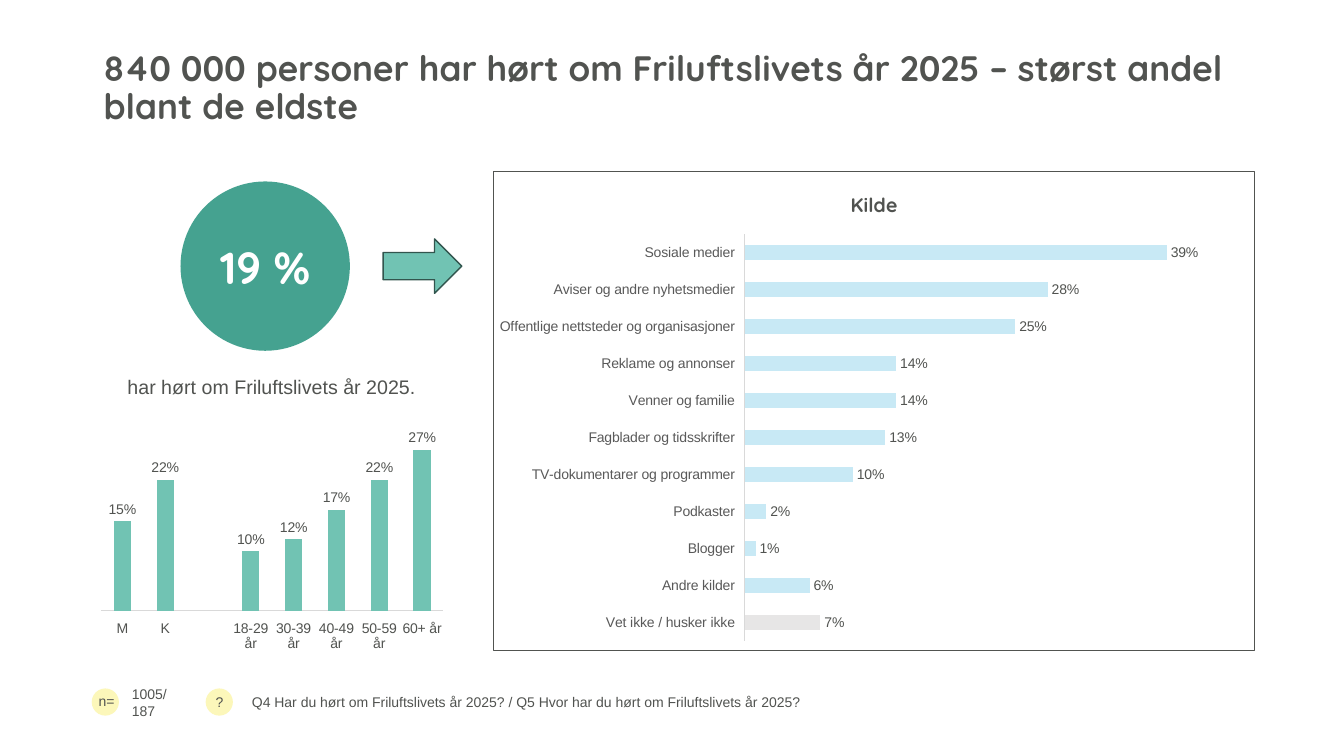
from lxml.etree import fromstring
from pptx import Presentation
from pptx.chart.data import CategoryChartData
from pptx.dml.color import RGBColor
from pptx.enum.chart import XL_CHART_TYPE, XL_LABEL_POSITION, XL_TICK_LABEL_POSITION, XL_TICK_MARK
from pptx.enum.shapes import MSO_SHAPE
from pptx.enum.text import MSO_ANCHOR, PP_ALIGN
from pptx.oxml.ns import nsdecls, qn
from pptx.util import Inches, Pt

DARK = "515350"
TEAL = "71C3B3"
YELLOW = "FCF7BA"
SOURCES = {
    "Sosiale medier": 0.39,
    "Aviser og andre nyhetsmedier": 0.28,
    "Offentlige nettsteder og organisasjoner": 0.25,
    "Reklame og annonser": 0.14,
    "Venner og familie": 0.14,
    "Fagblader og tidsskrifter": 0.13,
    "TV-dokumentarer og programmer": 0.10,
    "Podkaster": 0.02,
    "Blogger": 0.01,
    "Andre kilder": 0.06,
    "Vet ikke / husker ikke": 0.07,
}
GROUPS = {
    "M": 0.15,
    "K": 0.22,
    "": None,
    "18-29 år": 0.10,
    "30-39 år": 0.12,
    "40-49 år": 0.17,
    "50-59 år": 0.22,
    "60+ år": 0.27,
}


def color(value):
    """Turn a hex string into a colour."""
    return RGBColor.from_string(value)


def style_font(font, size, name="Arial", bold=False, fill=DARK):
    """Set the face, size, weight and colour of a font."""
    font.name = name
    font.size = Pt(size)
    font.bold = bold
    font.color.rgb = color(fill)


def write(shape, text, size, align=PP_ALIGN.LEFT, anchor=MSO_ANCHOR.TOP, **font):
    """Put one styled paragraph into a shape and return it."""
    frame = shape.text_frame
    frame.word_wrap = True
    frame.vertical_anchor = anchor
    frame.text = text
    para = frame.paragraphs[0]
    para.alignment = align
    style_font(para.runs[0].font, size, **font)
    return para


def add_text(page, place, text, size, **style):
    """Add a text box with one paragraph and return the paragraph."""
    box = page.shapes.add_textbox(*map(Inches, place))
    return write(box, text, size, **style)


def add_figure(page, kind, place, fill, line=None):
    """Add a filled preset shape, outlined if a line colour is given."""
    figure = page.shapes.add_shape(kind, *map(Inches, place))
    figure.shadow.inherit = False
    figure.fill.solid()
    figure.fill.fore_color.rgb = color(fill)
    if line:
        figure.line.color.rgb = color(line)
        figure.line.width = Pt(1)
    else:
        figure.line.fill.background()
    return figure


def set_plot_area(chart, x, y, width, height):
    """Fix the inner plot area as fractions of the chart."""
    area = chart.element.find(".//" + qn("c:plotArea"))
    for layout in area.findall(qn("c:layout")):
        area.remove(layout)
    area.insert(0, fromstring(
        f'<c:layout {nsdecls("c")}><c:manualLayout><c:layoutTarget val="inner"/>'
        f'<c:xMode val="edge"/><c:yMode val="edge"/><c:x val="{x}"/><c:y val="{y}"/>'
        f'<c:w val="{width}"/><c:h val="{height}"/></c:manualLayout></c:layout>'))


def add_border(chart, line):
    """Draw a thin frame around a chart."""
    chart.element.find(qn("c:txPr")).addprevious(fromstring(
        f'<c:spPr {nsdecls("c", "a")}><a:noFill/><a:ln w="9525"><a:solidFill>'
        f'<a:srgbClr val="{line}"/></a:solidFill></a:ln></c:spPr>'))


def add_bars(page, kind, place, shares, fill, maximum, plot_area):
    """Add a one-series chart of percentages and return it."""
    data = CategoryChartData(number_format="0%")
    data.categories = list(shares)
    data.add_series("Series 1", list(shares.values()))
    chart = page.shapes.add_chart(kind, *map(Inches, place), data).chart
    style_font(chart.font, 10)
    chart.has_legend = False
    chart.has_title = False
    set_plot_area(chart, *plot_area)

    values = chart.value_axis
    values.minimum_scale = 0
    values.maximum_scale = maximum
    values.has_major_gridlines = False
    values.visible = False
    categories = chart.category_axis
    categories.major_tick_mark = XL_TICK_MARK.NONE
    categories.tick_label_position = XL_TICK_LABEL_POSITION.LOW
    categories.format.line.color.rgb = color("D9D9D9")
    categories.format.line.width = Pt(0.75)

    plot = chart.plots[0]
    plot.vary_by_categories = False
    plot.gap_width = 150
    plot.has_data_labels = True
    labels = plot.data_labels
    labels.show_value = True
    labels.number_format = "0%"
    labels.number_format_is_linked = False
    labels.position = XL_LABEL_POSITION.OUTSIDE_END
    series = plot.series[0]
    series.format.fill.solid()
    series.format.fill.fore_color.rgb = color(fill)
    return chart


def add_source_chart(page):
    """Add the framed chart of where people heard about it."""
    chart = add_bars(page, XL_CHART_TYPE.BAR_CLUSTERED, (4.89, 1.7, 7.56, 4.76),
                     SOURCES, "C8E9F5", 0.45, (0.33, 0.13, 0.64, 0.85))
    chart.has_title = True
    chart.chart_title.include_in_layout = False
    title = chart.chart_title.text_frame
    title.text = "Kilde"
    style_font(title.paragraphs[0].runs[0].font, 14, "Quicksand", True)
    chart.category_axis.reverse_order = True
    style_font(chart.category_axis.tick_labels.font, 10, fill="595959")
    unknown = chart.plots[0].series[0].points[len(SOURCES) - 1].format.fill
    unknown.solid()
    unknown.fore_color.rgb = color("E7E6E6")
    add_border(chart, DARK)


def add_footer(page):
    """Add the sample size and the question wording with their markers."""
    for left in (0.91, 2.04):
        add_figure(page, MSO_SHAPE.OVAL, (left, 6.83, 0.27, 0.27), YELLOW)
    add_text(page, (0.88, 6.82, 0.45, 0.27), "n=", 10)
    add_text(page, (2.04, 6.83, 0.25, 0.27), "?", 10)
    add_text(page, (1.21, 6.83, 0.74, 0.27), "1005/ 187", 10, anchor=MSO_ANCHOR.MIDDLE)
    add_text(page, (2.4, 6.67, 10.05, 0.58),
             "Q4 Har du hørt om Friluftslivets år 2025? / Q5 Hvor har du hørt om Friluftslivets år 2025?",
             10, anchor=MSO_ANCHOR.MIDDLE)


def main():
    """Build and save the slide."""
    deck = Presentation()
    deck.slide_width = Inches(13.33)
    deck.slide_height = Inches(7.5)
    page = deck.slides.add_slide(deck.slide_layouts[6])

    heading = add_text(
        page, (0.93, 0.39, 11.52, 0.92),
        "840 000 personer har hørt om Friluftslivets år 2025 – størst andel blant de eldste",
        25.2, anchor=MSO_ANCHOR.BOTTOM, name="Quicksand", bold=True)
    heading.line_spacing = 0.9

    share = add_figure(page, MSO_SHAPE.OVAL, (1.79, 1.8, 1.68, 1.68), "45A290")
    frame = share.text_frame
    frame.margin_left = frame.margin_right = frame.margin_top = frame.margin_bottom = 0
    write(share, "19 %", 32, PP_ALIGN.CENTER, MSO_ANCHOR.MIDDLE,
          name="Quicksand", bold=True, fill="FFFFFF")
    add_text(page, (0.93, 3.67, 3.53, 0.34), "har hørt om Friluftslivets år 2025.",
             14, align=PP_ALIGN.CENTER)
    add_figure(page, MSO_SHAPE.RIGHT_ARROW, (3.8, 2.37, 0.78, 0.54), TEAL, "32554E")

    add_source_chart(page)
    add_bars(page, XL_CHART_TYPE.COLUMN_CLUSTERED, (0.93, 4.22, 3.54, 2.25),
             GROUPS, TEAL, 0.3, (0.02, 0.03, 0.96, 0.79))
    add_footer(page)
    deck.save("out.pptx")


if __name__ == "__main__":
    main()
